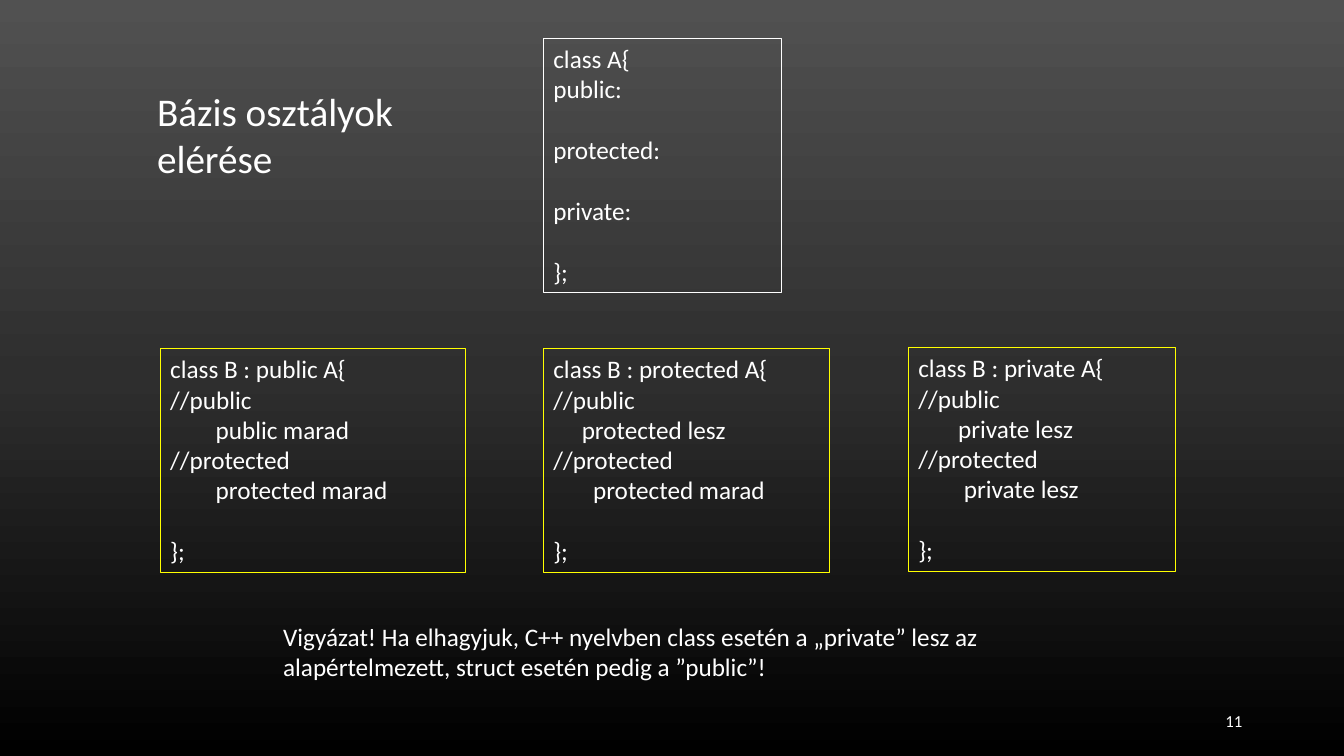
from copy import deepcopy

from pptx import Presentation
from pptx import util as u
from pptx.dml.color import RGBColor
from pptx.enum import shapes, text as t

COLOURS = {
    "text": "FFFFFF",
    "base": "FFFFFF",
    "derived": "FFFF00",
    "top": "515151",
    "middle": "2E2E2E",
    "bottom": "000000",
}
FONT = "Calibri"
LINE_HEIGHT = u.Pt(22)  # one line of 18 pt text

BASE_CLASS = """class A{
public:

protected:

private:

};"""

# Left, top, width and code of each derived class
DERIVED_CLASSES = [
    (1.59, 3.46, 3.03, """class B : public A{
//public
        public marad
//protected
        protected marad

};"""),
    (5.39, 3.46, 2.84, """class B : protected A{
//public
     protected lesz
//protected
       protected marad

};"""),
    (9.01, 3.45, 2.65, """class B : private A{
//public
       private lesz
//protected
        private lesz

};"""),
]


def colour(name):
    return RGBColor.from_string(COLOURS[name])


def paint_background(page):
    fill = page.background.fill
    fill.gradient()
    fill.gradient_angle = 270
    first_stop = page.element.xpath(".//p:bgPr//a:gs")[0]
    first_stop.addnext(deepcopy(first_stop))
    for stop, position, name in zip(
        fill.gradient_stops, (0, 0.5, 1), ("top", "middle", "bottom")
    ):
        stop.position = position
        stop.color.rgb = colour(name)


def write(box, text, size=18, align=t.PP_ALIGN.LEFT, anchor=t.MSO_ANCHOR.TOP):
    """Fill a box; an empty line becomes space before the next paragraph."""
    frame = box.text_frame
    frame.word_wrap = True
    frame.vertical_anchor = anchor
    para, gap = frame.paragraphs[0], 0
    for number, line in enumerate(text.split("\n")):
        if not line:
            gap += LINE_HEIGHT
            continue
        if number:
            para = frame.add_paragraph()
        para.alignment = align
        if gap:
            para.space_before, gap = u.Emu(gap), 0
        span = para.add_run()
        span.text = line
        span.font.name = FONT
        span.font.size = u.Pt(size)
        span.font.color.rgb = colour("text")


def add_text(page, left, top, width, height, text, **style):
    box = page.shapes.add_textbox(*map(u.Inches, (left, top, width, height)))
    write(box, text, **style)


def add_class(page, left, top, width, height, code, outline):
    box = page.shapes.add_shape(
        shapes.MSO_SHAPE.RECTANGLE, *map(u.Inches, (left, top, width, height))
    )
    box.shadow.inherit = False
    box.fill.background()
    box.line.color.rgb = colour(outline)
    box.line.width = u.Pt(0.75)
    write(box, code)


def main():
    deck = Presentation()
    deck.slide_width, deck.slide_height = u.Inches(13.33), u.Inches(7.5)
    page = deck.slides.add_slide(deck.slide_layouts[6])
    paint_background(page)

    # Base class and the three kinds of inheritance
    add_class(page, 5.39, 0.38, 2.36, 2.52, BASE_CLASS, "base")
    for left, top, width, code in DERIVED_CLASSES:
        add_class(page, left, top, width, 2.22, code, "derived")

    # Warning, title and page number
    add_text(page, 2.71, 6.11, 7.72, 0.71,
             "Vigyázat! Ha elhagyjuk, C++ nyelvben class esetén a „private” "
             "lesz az alapértelmezett, struct esetén pedig a ”public”!")
    add_text(page, 1.46, 0.82, 3.03, 1.04, "Bázis osztályok elérése", size=28)
    add_text(page, 9.42, 6.95, 3, 0.4, "11", size=12,
             align=t.PP_ALIGN.RIGHT, anchor=t.MSO_ANCHOR.MIDDLE)

    deck.save("out.pptx")


if __name__ == "__main__":
    main()
